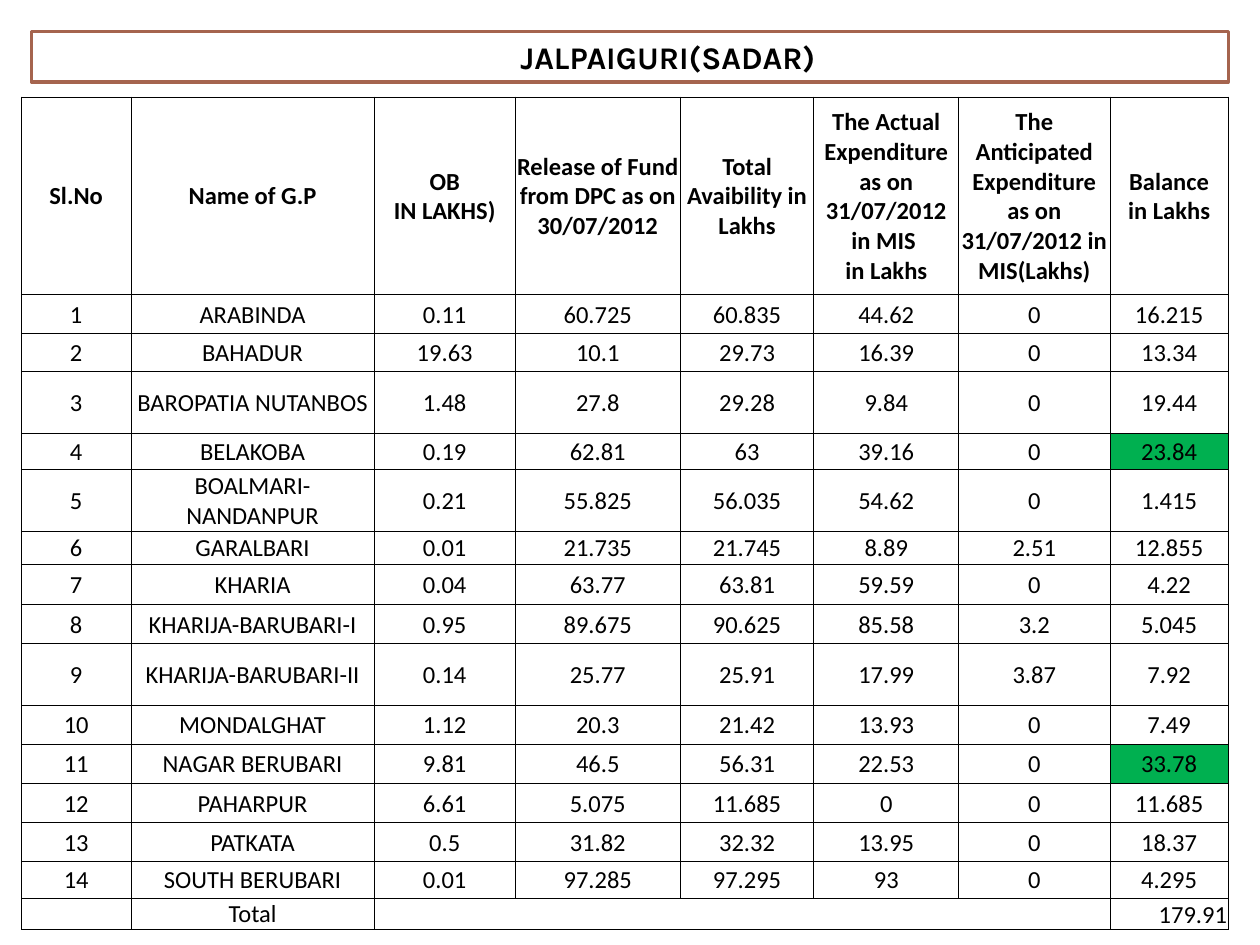
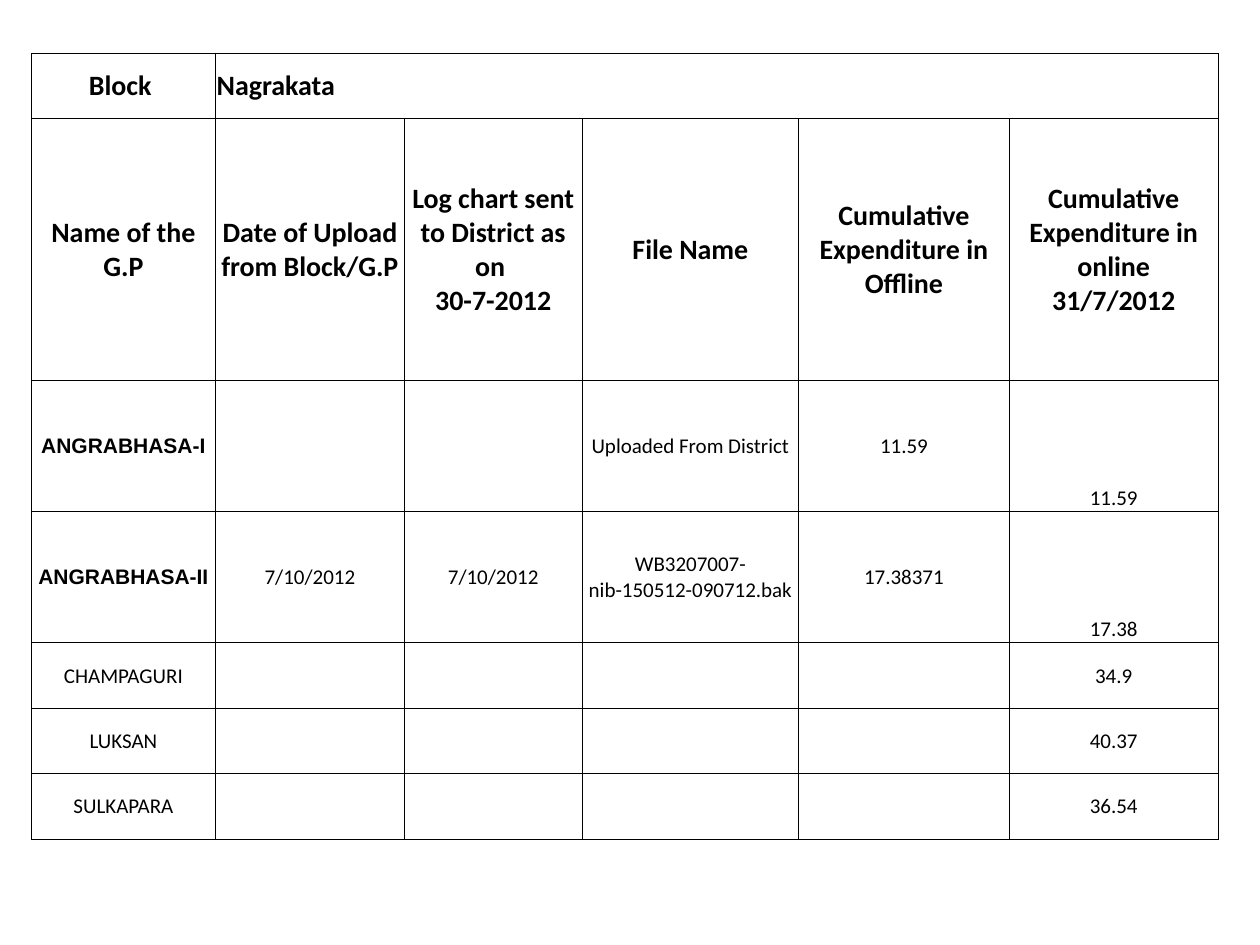
from lxml import etree
from pptx import Presentation
from pptx.dml.color import RGBColor
from pptx.enum import shapes, text
from pptx.oxml.ns import qn
from pptx.util import Inches, Pt

BLACK, WHITE, FRAME, GREEN = "000000", "FFFFFF", "A5644E", "00B050"
BODY_FONT, TITLE_FONT = "Calibri", "Karla"
CENTER, LEFT, RIGHT = text.PP_ALIGN.CENTER, text.PP_ALIGN.LEFT, text.PP_ALIGN.RIGHT
MIDDLE, BOTTOM = text.MSO_ANCHOR.MIDDLE, text.MSO_ANCHOR.BOTTOM

# Fund table: "\n" starts a paragraph, "\v" breaks a line
FUND_COLS = [0.87, 1.93, 1.12, 1.31, 1.06, 1.15, 1.2, 0.94]
FUND_ROWS = [1.57, 0.31, 0.3, 0.49, 0.29, 0.49, 0.26, 0.32, 0.31, 0.49,
             0.31, 0.31, 0.31, 0.31, 0.29, 0.25]
FUND_HEAD = ["Sl.No", "Name of G.P", "OB\nIN LAKHS)",
             "Release of Fund from DPC as on 30/07/2012",
             "Total Avaibility in Lakhs",
             "The Actual Expenditure as on 31/07/2012 in MIS \vin Lakhs",
             "The Anticipated Expenditure as on 31/07/2012 in MIS(Lakhs)",
             "Balance\vin Lakhs"]
FUNDS = [
    ("ARABINDA", "0.11 60.725 60.835 44.62 0 16.215"),
    ("BAHADUR", "19.63 10.1 29.73 16.39 0 13.34"),
    ("BAROPATIA NUTANBOS", "1.48 27.8 29.28 9.84 0 19.44"),
    ("BELAKOBA", "0.19 62.81 63 39.16 0 23.84"),
    ("BOALMARI-NANDANPUR", "0.21 55.825 56.035 54.62 0 1.415"),
    ("GARALBARI", "0.01 21.735 21.745 8.89 2.51 12.855"),
    ("KHARIA", "0.04 63.77 63.81 59.59 0 4.22"),
    ("KHARIJA-BARUBARI-I", "0.95 89.675 90.625 85.58 3.2 5.045"),
    ("KHARIJA-BARUBARI-II", "0.14 25.77 25.91 17.99 3.87 7.92"),
    ("MONDALGHAT", "1.12 20.3 21.42 13.93 0 7.49"),
    ("NAGAR BERUBARI", "9.81 46.5 56.31 22.53 0 33.78"),
    ("PAHARPUR", "6.61 5.075 11.685 0 0 11.685"),
    ("PATKATA", "0.5 31.82 32.32 13.95 0 18.37"),
    ("SOUTH BERUBARI", "0.01 97.285 97.295 93 0 4.295"),
]
HIGHLIGHTED = {"BELAKOBA", "NAGAR BERUBARI"}

# Upload table
UPLOAD_COLS = [1.46, 1.5, 1.41, 1.72, 1.67, 1.66]
UPLOAD_ROWS = [0.52, 2.08, 1.04, 1.04, 0.52, 0.52, 0.52]
UPLOADS = [
    ["Block ", "Nagrakata", "", "", "", ""],
    ["Name of the G.P", "Date of Upload from Block/G.P",
     "Log chart sent to District as on \v30-7-2012", "File Name",
     "Cumulative Expenditure in Offline",
     "Cumulative Expenditure in online\v31/7/2012"],
    ["ANGRABHASA-I", "", "", "Uploaded From District", "11.59", "11.59"],
    ["ANGRABHASA-II", "7/10/2012", "7/10/2012",
     "WB3207007-nib-150512-090712.bak", "17.38371", "17.38"],
    ["CHAMPAGURI", "", "", "", "", "34.9"],
    ["LUKSAN", "", "", "", "", "40.37"],
    ["SULKAPARA", "", "", "", "", "36.54"],
]


def rgb(value):
    return RGBColor.from_string(value)


def write(tf, content, size=14, font=BODY_FONT, color=BLACK, bold=False, align=CENTER):
    for i, line in enumerate(content.split("\n")):
        p = tf.paragraphs[0] if i == 0 else tf.add_paragraph()
        p.alignment = align
        p.text = line
        for r in p.runs:
            r.font.size, r.font.name, r.font.bold = Pt(size), font, bold
            r.font.color.rgb = rgb(color)
        # Line breaks and empty cells keep the height of the text size
        for br in p._p.findall(qn("a:br")):
            etree.SubElement(br, qn("a:rPr"), sz=str(size * 100))
        if not line:
            etree.SubElement(p._p, qn("a:endParaRPr"), sz=str(size * 100))


def add_borders(cell, color=BLACK, width=0.5):
    tc_pr = cell._tc.get_or_add_tcPr()
    for side in ("lnL", "lnR", "lnT", "lnB"):
        ln = etree.SubElement(tc_pr, qn("a:" + side), w=str(Pt(width)))
        fill = etree.SubElement(ln, qn("a:solidFill"))
        etree.SubElement(fill, qn("a:srgbClr"), val=color)


def add_grid(slide, left, top, cols, rows, cells, style):
    """Draw a ruled table; style(row, col) gives the format of a cell."""
    frame = slide.shapes.add_table(len(rows), len(cols), Inches(left), Inches(top),
                                   Inches(sum(cols)), Inches(sum(rows)))
    table = frame.table
    table.first_row = table.horz_banding = False
    for column, width in zip(table.columns, cols):
        column.width = Inches(width)
    for row, height in zip(table.rows, rows):
        row.height = Inches(height)
    for i, values in enumerate(cells):
        for j, value in enumerate(values):
            cell, fmt = table.cell(i, j), style(i, j)
            cell.margin_left = cell.margin_right = cell.margin_top = Inches(0.01)
            cell.margin_bottom = 0
            cell.vertical_anchor = fmt.pop("anchor", MIDDLE)
            add_borders(cell)
            fill = fmt.pop("fill", None)
            if fill:
                cell.fill.solid()
                cell.fill.fore_color.rgb = rgb(fill)
            else:
                cell.fill.background()
            write(cell.text_frame, value, **fmt)
    return table


def add_title(slide, left, top, width, height, title):
    sp = slide.shapes.add_shape(shapes.MSO_SHAPE.RECTANGLE, Inches(left), Inches(top),
                                Inches(width), Inches(height))
    sp.shadow.inherit = False
    sp.fill.solid()
    sp.fill.fore_color.rgb = rgb(WHITE)
    sp.line.color.rgb = rgb(FRAME)
    sp.line.width = Pt(2)
    tf = sp.text_frame
    tf.word_wrap = True
    tf.vertical_anchor = MIDDLE
    tf.margin_left = Inches(3.88)
    write(tf, title, size=18, font=TITLE_FONT, bold=True, align=LEFT)


def fund_style(i, j):
    fmt = {"bold": i == 0}
    if j == len(FUND_COLS) - 1:
        if i == len(FUND_ROWS) - 1:
            fmt.update(anchor=BOTTOM, align=RIGHT)
        elif i > 0 and FUNDS[i - 1][0] in HIGHLIGHTED:
            fmt["fill"] = GREEN
    return fmt


def upload_style(i, j):
    if i < 2:
        return {"size": 16, "bold": True, "align": LEFT if (i, j) == (0, 1) else CENTER}
    fmt = {"size": 12}
    if i < 4 and j == 0:
        fmt.update(font="Arial", bold=True)
    if i < 4 and j == 5:
        fmt["anchor"] = BOTTOM
    return fmt


def fund_slide(slide):
    add_title(slide, 0.25, 0.25, 9.5, 0.4, "JALPAIGURI(SADAR)")
    body = [[str(n), name, *figures.split()]
            for n, (name, figures) in enumerate(FUNDS, 1)]
    total = ["", "Total", "", "", "", "", "", "179.91"]
    table = add_grid(slide, 0.17, 0.77, FUND_COLS, FUND_ROWS,
                     [FUND_HEAD, *body, total], fund_style)
    last = len(FUND_ROWS) - 1
    table.cell(last, 2).merge(table.cell(last, 6))


def upload_slide(slide):
    table = add_grid(slide, 0.25, 0.42, UPLOAD_COLS, UPLOAD_ROWS, UPLOADS, upload_style)
    table.cell(0, 1).merge(table.cell(0, 5))


def main():
    prs = Presentation()
    prs.slide_width, prs.slide_height = Inches(10), Inches(7.5)
    for build in (fund_slide, upload_slide):
        build(prs.slides.add_slide(prs.slide_layouts[6]))
    prs.save("out.pptx")


if __name__ == "__main__":
    main()
